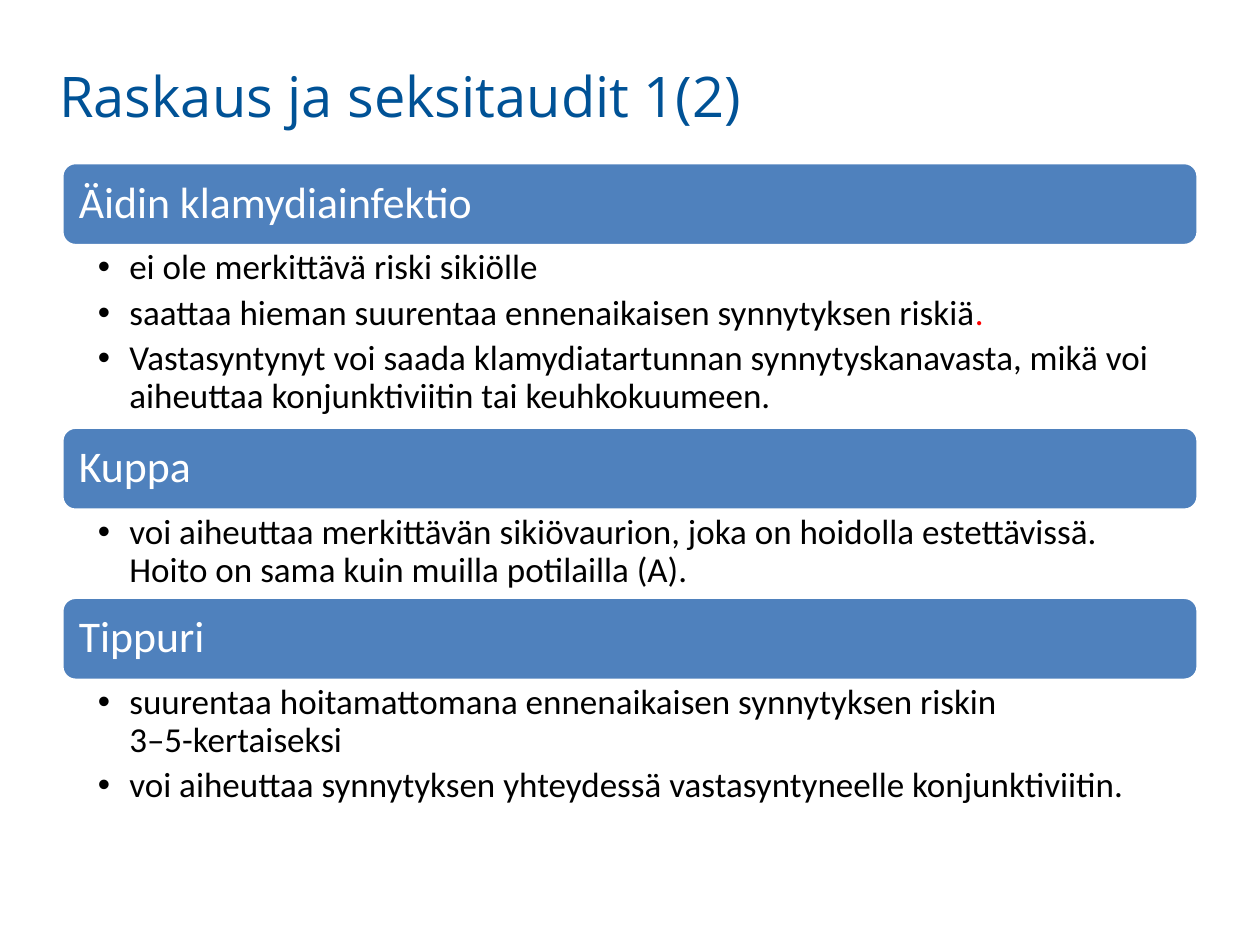
import pptx
import pptx.dml.color
import pptx.enum.shapes
import pptx.enum.text
import pptx.oxml.ns
import pptx.util
from lxml import etree

Pt = pptx.util.Pt
RGBColor = pptx.dml.color.RGBColor
MSO_ANCHOR = pptx.enum.text.MSO_ANCHOR

TITLE_BLUE = RGBColor(0x00, 0x52, 0x96)
BAR_BLUE = RGBColor(0x4F, 0x81, 0xBD)
WHITE = RGBColor(0xFF, 0xFF, 0xFF)
BLACK = RGBColor(0x00, 0x00, 0x00)
RED = RGBColor(0xFF, 0x00, 0x00)

SECTION_LEFT, SECTION_TOP, SECTION_WIDTH = 35.3, 92.9, 649.4
BAR_HEIGHT = 47.5
COMPARISON_LAYOUT = 4

# Heading, height of its list, list items; an item is a list of (text, colour).
SECTIONS = [
    ("Äidin klamydiainfektio", 103.7, [
        [("ei ole merkittävä riski sikiölle", BLACK)],
        [("saattaa hieman suurentaa ennenaikaisen synnytyksen riskiä", BLACK),
         (".", RED)],
        [("Vastasyntynyt voi saada klamydiatartunnan synnytyskanavasta, mikä voi "
          "aiheuttaa konjunktiviitin tai keuhkokuumeen.", BLACK)],
    ]),
    ("Kuppa", 49.7, [
        [("voi aiheuttaa merkittävän sikiövaurion, joka on hoidolla estettävissä. "
          "Hoito on sama kuin muilla potilailla (A).", BLACK)],
    ]),
    ("Tippuri", 77.8, [
        [("suurentaa hoitamattomana ennenaikaisen synnytyksen riskin\n"
          "3–5-kertaiseksi", BLACK)],
        [("voi aiheuttaa synnytyksen yhteydessä vastasyntyneelle "
          "konjunktiviitin.", BLACK)],
    ]),
]


def write(paragraph, text, *, size, color, font="Calibri"):
    """Append formatted text; a newline becomes a line break."""
    for number, line in enumerate(text.split("\n")):
        if number:
            paragraph.add_line_break()
        run = paragraph.add_run()
        run.text = line
        run.font.name = font
        run.font.size = Pt(size)
        run.font.bold = False
        run.font.color.rgb = color


def place(shape, left, top, width, height):
    shape.left, shape.top = Pt(left), Pt(top)
    shape.width, shape.height = Pt(width), Pt(height)


def set_frame(frame, anchor, left, top, right, bottom):
    """Set the anchor and the four insets of a wrapping text frame."""
    frame.word_wrap = True
    frame.auto_size = pptx.enum.text.MSO_AUTO_SIZE.NONE
    frame.vertical_anchor = anchor
    frame.margin_left, frame.margin_top = Pt(left), Pt(top)
    frame.margin_right, frame.margin_bottom = Pt(right), Pt(bottom)


def set_paragraph(paragraph, space_after=0, line_spacing=0.9):
    paragraph.alignment = pptx.enum.text.PP_ALIGN.LEFT
    paragraph.line_spacing = line_spacing
    paragraph.space_before = Pt(0)
    paragraph.space_after = Pt(space_after)


def add_bullet(paragraph, indent):
    properties = paragraph._p.get_or_add_pPr()
    properties.set("marL", str(Pt(indent)))
    properties.set("indent", str(-Pt(indent)))
    for tag, name, value in (("a:buFont", "typeface", "Arial"),
                             ("a:buChar", "char", "•")):
        etree.SubElement(properties, pptx.oxml.ns.qn(tag)).set(name, value)


def fill_title(title):
    place(title, 26.6, 31.7, 649.4, 90.7)
    set_frame(title.text_frame, MSO_ANCHOR.TOP, 7.2, 3.6, 7.2, 3.6)
    paragraph = title.text_frame.paragraphs[0]
    set_paragraph(paragraph, line_spacing=1.0)
    write(paragraph, "Raskaus ja seksitaudit 1(2)", size=32,
          color=TITLE_BLUE, font="Open Sans")


def add_heading_bar(slide, heading, top):
    bar = slide.shapes.add_shape(
        pptx.enum.shapes.MSO_SHAPE.ROUNDED_RECTANGLE,
        Pt(SECTION_LEFT), Pt(top), Pt(SECTION_WIDTH), Pt(BAR_HEIGHT))
    bar.shadow.inherit = False
    bar.fill.solid()
    bar.fill.fore_color.rgb = BAR_BLUE
    bar.line.color.rgb = WHITE
    bar.line.width = Pt(2)
    # The rounded corners add to the left and right insets of the text.
    set_frame(bar.text_frame, MSO_ANCHOR.MIDDLE, 7.5, 7.2, 7.5, 7.2)
    paragraph = bar.text_frame.paragraphs[0]
    set_paragraph(paragraph)
    write(paragraph, heading, size=25, color=WHITE)


def fill_list(body, items, top, height):
    place(body, SECTION_LEFT, top, SECTION_WIDTH, height)
    frame = body.text_frame
    set_frame(frame, MSO_ANCHOR.TOP, 20.6, 2.3, 13.7, 2.3)
    for number, item in enumerate(items):
        paragraph = frame.add_paragraph() if number else frame.paragraphs[0]
        paragraph.level = 1
        set_paragraph(paragraph, space_after=4.4)
        add_bullet(paragraph, 18)
        for text, color in item:
            write(paragraph, text, size=20, color=color)


def main():
    presentation = pptx.Presentation()
    presentation.slide_width, presentation.slide_height = Pt(720), Pt(540)
    slide = presentation.slides.add_slide(
        presentation.slide_layouts[COMPARISON_LAYOUT])
    fill_title(slide.shapes.title)

    bodies = list(slide.placeholders)[1:]
    top = SECTION_TOP
    for body, (heading, list_height, items) in zip(bodies, SECTIONS):
        add_heading_bar(slide, heading, top)
        fill_list(body, items, top + BAR_HEIGHT, list_height)
        top += BAR_HEIGHT + list_height
    for unused in bodies[len(SECTIONS):]:
        unused.element.getparent().remove(unused.element)

    presentation.save("out.pptx")


if __name__ == "__main__":
    main()
